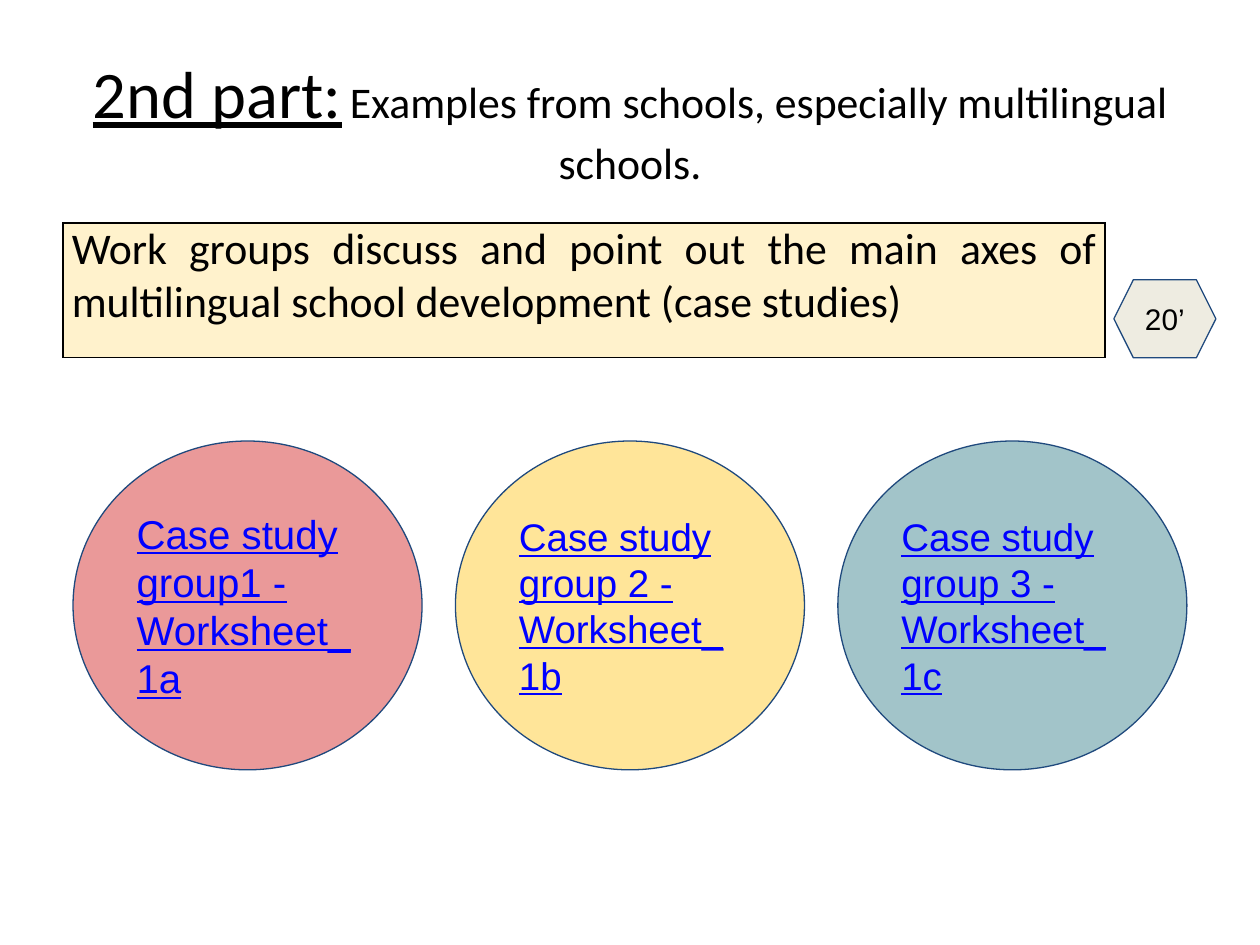
from dataclasses import dataclass

from lxml.etree import SubElement
from pptx import Presentation
from pptx.dml.color import RGBColor as Rgb
from pptx.enum.shapes import MSO_SHAPE as Shape
from pptx.enum.text import MSO_ANCHOR as Anchor, PP_ALIGN as Align
from pptx.oxml.ns import qn
from pptx.util import Emu, Inches, Pt

COLUMNS, ROWS = 100, 75
WIDTH, HEIGHT = Inches(10), Inches(7.5)


@dataclass(frozen=True)
class Theme:
    heading_font: str = "Calibri"
    label_font: str = "Arial"
    ink: str = "000000"
    link: str = "0000FF"
    outline: str = "1F497D"
    task_fill: str = "FFF2CC"
    timer_fill: str = "EEECE1"
    part_size: int = 38
    gap_size: int = 21
    body_size: int = 25
    timer_size: int = 17
    line_width: float = 0.75


@dataclass(frozen=True)
class Box:
    column: float
    row: float
    columns: float
    rows: float

    def place(self):
        across, down = WIDTH / COLUMNS, HEIGHT / ROWS
        return (Emu(round(self.column * across)), Emu(round(self.row * down)),
                Emu(round(self.columns * across)), Emu(round(self.rows * down)))


THEME = Theme()


def add_span(para, text, size, font, color, underline=False):
    span = para.add_run()
    span.text = text
    span.font.size = Pt(size)
    span.font.name = font
    span.font.color.rgb = Rgb.from_string(color)
    span.font.underline = underline


def set_margins(target, side, vertical):
    target.margin_left = target.margin_right = Inches(side)
    target.margin_top = target.margin_bottom = Inches(vertical)


def add_title(page, box):
    frame = page.shapes.add_textbox(*box.place()).text_frame
    frame.word_wrap = True
    frame.vertical_anchor = Anchor.MIDDLE
    set_margins(frame, 0.1, 0.05)
    para = frame.paragraphs[0]
    para.alignment = Align.CENTER
    para.line_spacing = 1.08
    para.space_after = Pt(8)
    font, ink = THEME.heading_font, THEME.ink
    add_span(para, "2nd part:", THEME.part_size, font, ink, True)
    add_span(para, " ", THEME.gap_size, font, ink)
    add_span(para, "Examples from schools, especially multilingual schools.",
             THEME.body_size, font, ink)


def add_borders(cell):
    properties = cell._tc.get_or_add_tcPr()
    for index, side in enumerate(("a:lnL", "a:lnR", "a:lnT", "a:lnB")):
        line = SubElement(properties, qn(side), w=str(Pt(THEME.line_width)))
        fill = SubElement(line, qn("a:solidFill"))
        SubElement(fill, qn("a:srgbClr"), val=THEME.ink)
        properties.insert(index, line)


def add_task(page, box):
    table = page.shapes.add_table(1, 1, *box.place()).table
    table.first_row = table.horz_banding = False
    cell = table.cell(0, 0)
    cell.fill.solid()
    cell.fill.fore_color.rgb = Rgb.from_string(THEME.task_fill)
    add_borders(cell)
    set_margins(cell, 0.07, 0)
    para = cell.text_frame.paragraphs[0]
    para.alignment = Align.JUSTIFY
    add_span(para, "Work groups discuss and point out the main axes of "
             "multilingual school development (case studies)",
             THEME.body_size, THEME.heading_font, THEME.ink)


def add_badge(page, box, kind, fill, align):
    badge = page.shapes.add_shape(kind, *box.place())
    badge.shadow.inherit = False
    badge.fill.solid()
    badge.fill.fore_color.rgb = Rgb.from_string(fill)
    badge.line.color.rgb = Rgb.from_string(THEME.outline)
    badge.line.width = Pt(THEME.line_width)
    frame = badge.text_frame
    frame.word_wrap = True
    frame.vertical_anchor = Anchor.MIDDLE
    set_margins(frame, 0.1, 0.1)
    para = frame.paragraphs[0]
    para.alignment = align
    return para


def add_timer(page, box):
    para = add_badge(page, box, Shape.HEXAGON, THEME.timer_fill, Align.CENTER)
    add_span(para, "20’", THEME.timer_size, THEME.label_font, THEME.ink)


def add_groups(page, box, groups):
    diameter = 27.7
    pitch = (box.columns - diameter) / (len(groups) - 1)
    for index, (text, size, fill) in enumerate(groups):
        circle = Box(box.column + index * pitch, box.row, diameter, box.rows)
        para = add_badge(page, circle, Shape.OVAL, fill, Align.LEFT)
        add_span(para, text, size, THEME.label_font, THEME.link, True)


def main():
    deck = Presentation()
    deck.slide_width, deck.slide_height = WIDTH, HEIGHT
    page = deck.slides.add_slide(deck.slide_layouts[6])
    add_title(page, Box(5, 3, 90, 12.5))
    add_task(page, Box(5, 17.7, 82.7, 10.7))
    add_timer(page, Box(88.4, 22.2, 8.1, 6.2))
    add_groups(page, Box(5.8, 35, 88.4, 26.1), (
        ("Case study group1 - Worksheet_1a", 23, "EA9999"),
        ("Case study group 2 - Worksheet_1b", 22, "FFE599"),
        ("Case study group 3 - Worksheet_1c", 22, "A2C4C9"),
    ))
    deck.save("out.pptx")


if __name__ == "__main__":
    main()
